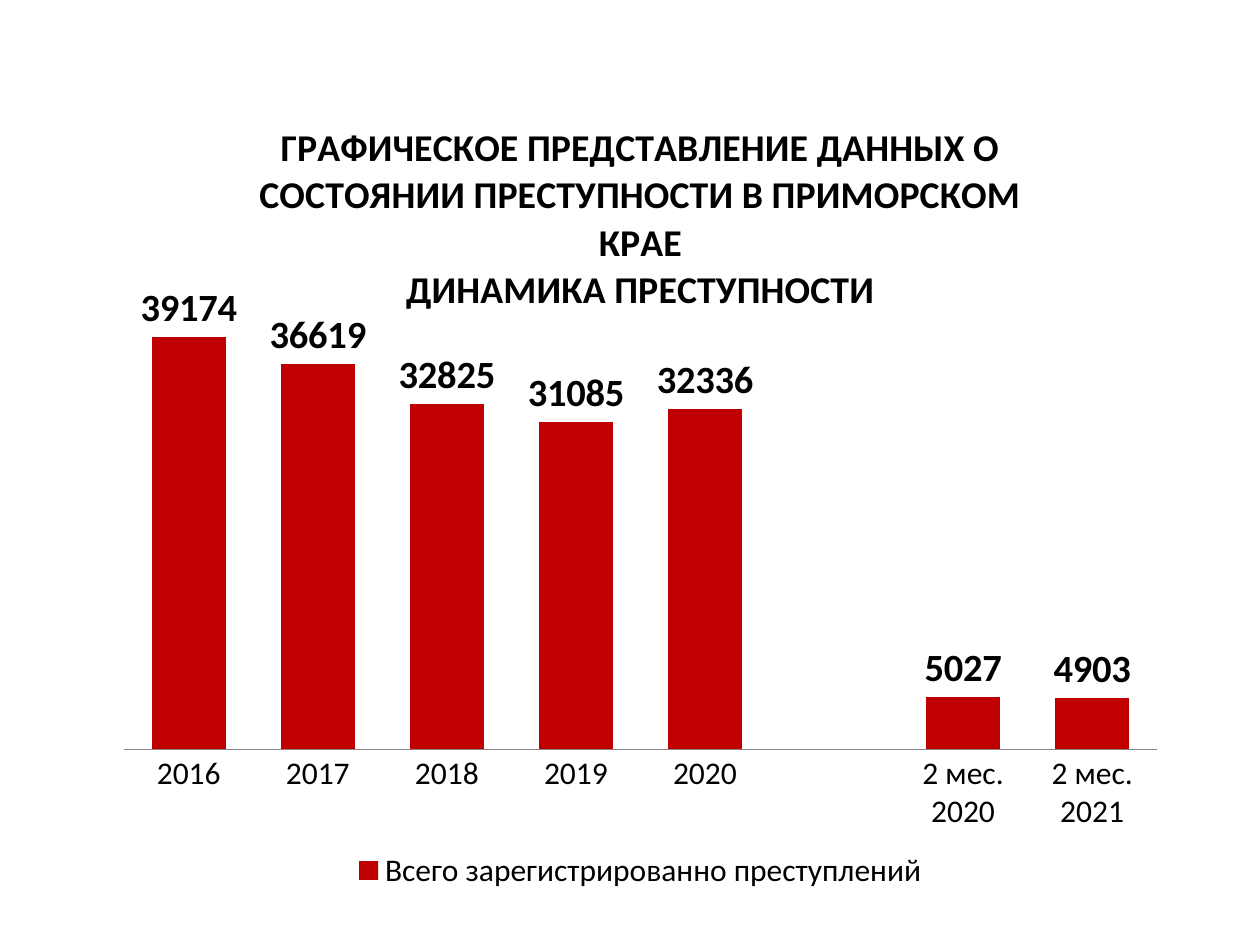
from pptx import Presentation
from pptx.chart.data import CategoryChartData
from pptx.dml.color import RGBColor
from pptx.enum.chart import XL_CHART_TYPE, XL_LABEL_POSITION, XL_LEGEND_POSITION, XL_TICK_MARK
from pptx.enum.text import PP_ALIGN
from pptx.oxml import parse_xml
from pptx.oxml.ns import nsdecls
from pptx.util import Emu, Pt

SCALE = 914400 / 126


def px(length):
    return Emu(round(length * SCALE))


def style(font, size, color, bold=False):
    font.name = "Calibri"
    font.size = Pt(size)
    font.bold = bold
    font.color.rgb = RGBColor.from_string(color)


deck = Presentation()
deck.slide_width = px(1260)
deck.slide_height = px(945)
page = deck.slides.add_slide(deck.slide_layouts[6])

crime_data = CategoryChartData(number_format="General")
crime_data.categories = ["2016", "2017", "2018", "2019", "2020", "", "2 мес. 2020", "2 мес. 2021"]
crime_data.add_series(
    "Всего зарегистрированно преступлений",
    [39174, 36619, 32825, 31085, 32336, None, 5027, 4903],
)
chart = page.shapes.add_chart(
    XL_CHART_TYPE.COLUMN_CLUSTERED, px(105), px(96), px(1071), px(800), crime_data
).chart
style(chart.font, 18, "000000")

chart.has_title = True
title = chart.chart_title
title.include_in_layout = False
title.text_frame.text = (
    "ГРАФИЧЕСКОЕ ПРЕДСТАВЛЕНИЕ ДАННЫХ О СОСТОЯНИИ ПРЕСТУПНОСТИ В ПРИМОРСКОМ КРАЕ\n"
    "ДИНАМИКА ПРЕСТУПНОСТИ"
)
for para in title.text_frame.paragraphs:
    para.alignment = PP_ALIGN.CENTER
    style(para.font, 21.6, "000000", True)
    for span in para.runs:
        style(span.font, 21.6, "000000", True)

chart.has_legend = True
chart.legend.position = XL_LEGEND_POSITION.BOTTOM
chart.legend.include_in_layout = False
style(chart.legend.font, 18, "000000")

years = chart.category_axis
years.major_tick_mark = XL_TICK_MARK.NONE
years.minor_tick_mark = XL_TICK_MARK.NONE
years.format.line.color.rgb = RGBColor.from_string("868686")
years.format.line.width = Pt(0.75)
style(years.tick_labels.font, 18, "000000")

counts = chart.value_axis
counts.visible = False
counts.has_major_gridlines = False
counts.minimum_scale = 0
counts.maximum_scale = 45000

plot = chart.plots[0]
plot.gap_width = 75
plot.vary_by_categories = False
crimes = plot.series[0]
crimes.format.fill.solid()
crimes.format.fill.fore_color.rgb = RGBColor.from_string("C00000")
crimes.invert_if_negative = False
labels = crimes.data_labels
labels.show_value = True
labels.position = XL_LABEL_POSITION.OUTSIDE_END
style(labels.font, 22, "000000", True)

plot_area = chart.element.chart.plotArea
for old_layout in plot_area.xpath("c:layout"):
    plot_area.remove(old_layout)
plot_area.insert(0, parse_xml(
    f'<c:layout {nsdecls("c")}><c:manualLayout><c:layoutTarget val="inner"/>'
    '<c:xMode val="edge"/><c:yMode val="edge"/><c:x val="0.018"/><c:y val="0.225"/>'
    '<c:w val="0.964"/><c:h val="0.592"/></c:manualLayout></c:layout>'
))

deck.save("out.pptx")
